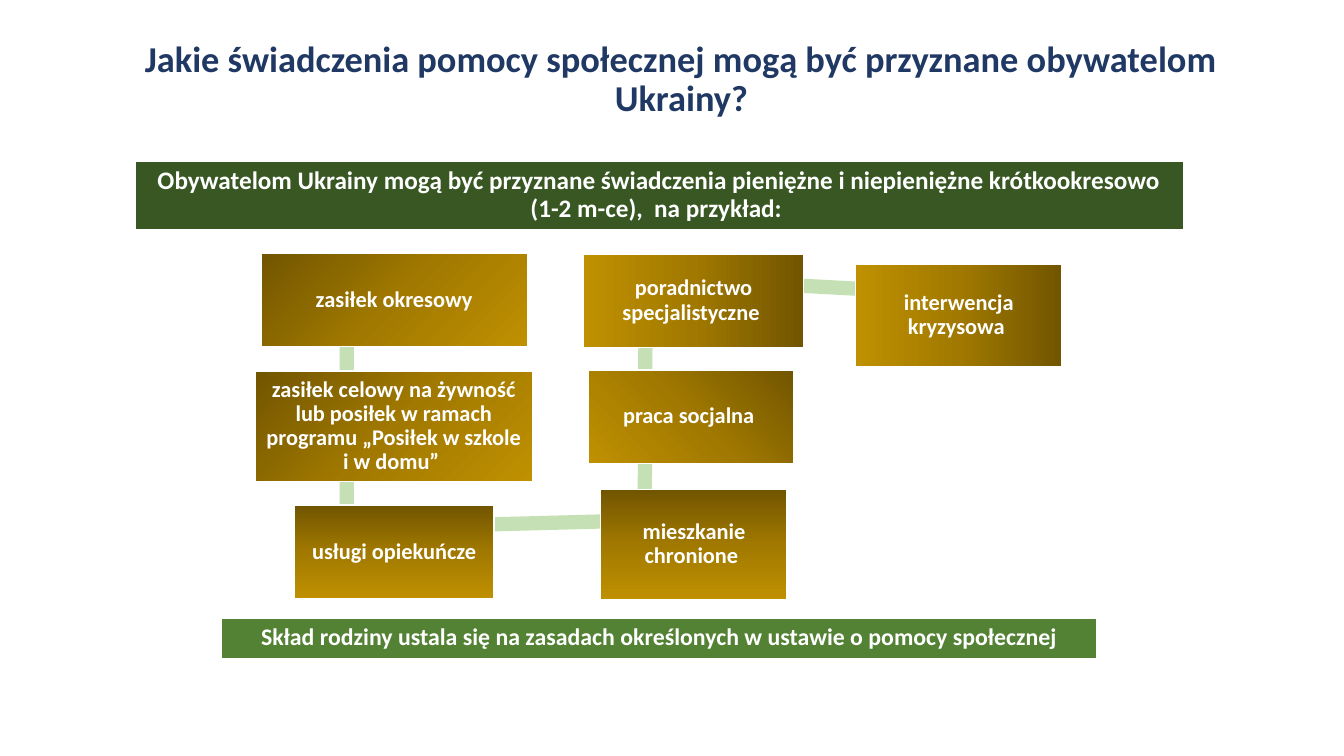
"""Build a slide on the social aid open to citizens of Ukraine."""
from copy import deepcopy
from dataclasses import dataclass

from pptx import Presentation
from pptx.dml.color import RGBColor
from pptx.enum.shapes import MSO_SHAPE
from pptx.enum.text import MSO_ANCHOR, MSO_AUTO_SIZE, PP_ALIGN
from pptx.util import Cm, Pt


@dataclass(frozen=True)
class Theme:
    font: str = "Calibri"
    navy: str = "203864"
    white: str = "FFFFFF"
    forest: str = "385723"
    green: str = "548235"
    mint: str = "C5E0B4"
    gold: tuple = ((0, "715500"), (0.5, "A17900"), (1, "BF9000"))
    title: int = 26
    lead: int = 18
    note: int = 17
    body: int = 16


theme = Theme()


def write(shape, text, size, color):
    frame = shape.text_frame
    frame.text = text
    frame.word_wrap = True
    frame.auto_size = MSO_AUTO_SIZE.NONE
    frame.vertical_anchor = MSO_ANCHOR.MIDDLE
    para = frame.paragraphs[0]
    para.alignment = PP_ALIGN.CENTER
    para.line_spacing = 0.9
    para.font.name = theme.font
    para.font.size = Pt(size)
    para.font.bold = True
    para.font.color.rgb = RGBColor.from_string(color)


def block(place, fill, text="", size=theme.body):
    shape = slide.shapes.add_shape(MSO_SHAPE.RECTANGLE, *map(Cm, place))
    shape.shadow.inherit = False
    shape.fill.solid()
    shape.fill.fore_color.rgb = RGBColor.from_string(fill)
    if not text:
        shape.line.fill.background()
        return shape
    shape.line.color.rgb = RGBColor.from_string(theme.white)
    shape.line.width = Pt(1)
    write(shape, text, size, theme.white)
    frame = shape.text_frame
    frame.margin_left = frame.margin_right = Cm(0.18)
    frame.margin_top = frame.margin_bottom = Cm(0.18)
    return shape


deck = Presentation()
deck.slide_width, deck.slide_height = Cm(33.87), Cm(19.05)
slide = deck.slides.add_slide(deck.slide_layouts[5])

title = slide.shapes.title
title.left, title.top, title.width, title.height = map(Cm, (2.34, 1.04, 29.67, 1.98))
write(title, "Jakie świadczenia pomocy społecznej mogą być przyznane obywatelom Ukrainy?",
      theme.title, theme.navy)

bars = [
    (7.16, 8.38, 3.15, 90),
    (7.16, 11.56, 3.15, 90),
    (8.74, 13.03, 7.54, 358.5),
    (14.66, 11.35, 3.2, 270.9),
    (14.81, 8.28, 2.92, 270.7),
    (16.31, 6.99, 6.68, 3.1),
]
for left, top, width, turn in bars:
    bar = block((left, top, width, 0.36), theme.mint)
    bar.rotation = turn

aids = [
    ("zasiłek okresowy", (6.58, 6.38, 6.71, 2.36), 45),
    ("zasiłek celowy na żywność lub posiłek w ramach programu „Posiłek w szkole i w domu” ",
     (6.43, 9.35, 6.99, 2.79), 45),
    ("usługi opiekuńcze", (7.42, 12.73, 5.03, 2.36), 90),
    ("mieszkanie chronione ", (15.14, 12.34, 4.7, 2.77), 90),
    ("praca socjalna ", (14.83, 9.32, 5.18, 2.36), 135),
    ("poradnictwo specjalistyczne ", (14.71, 6.4, 5.54, 2.36), 180),
    ("interwencja kryzysowa ", (21.56, 6.65, 5.21, 2.59), 180),
]
for text, place, angle in aids:
    box = block(place, theme.gold[0][1], text)
    box.fill.gradient()
    box.fill.gradient_angle = 360 - angle
    stops = box._element.spPr.xpath(".//a:gsLst")[0]
    stops.insert(1, deepcopy(stops[0]))
    for stop, (spot, color) in zip(box.fill.gradient_stops, theme.gold):
        stop.position = spot
        stop.color.rgb = RGBColor.from_string(color)

block((3.4, 4.06, 26.42, 1.73), theme.forest,
      "Obywatelom Ukrainy mogą być przyznane świadczenia pieniężne i niepieniężne "
      "krótkookresowo (1-2 m-ce),  na przykład: ", theme.lead)
block((5.59, 15.57, 22.05, 1.02), theme.green,
      "Skład rodziny ustala się na zasadach określonych w ustawie o pomocy społecznej",
      theme.note)

deck.save("out.pptx")
